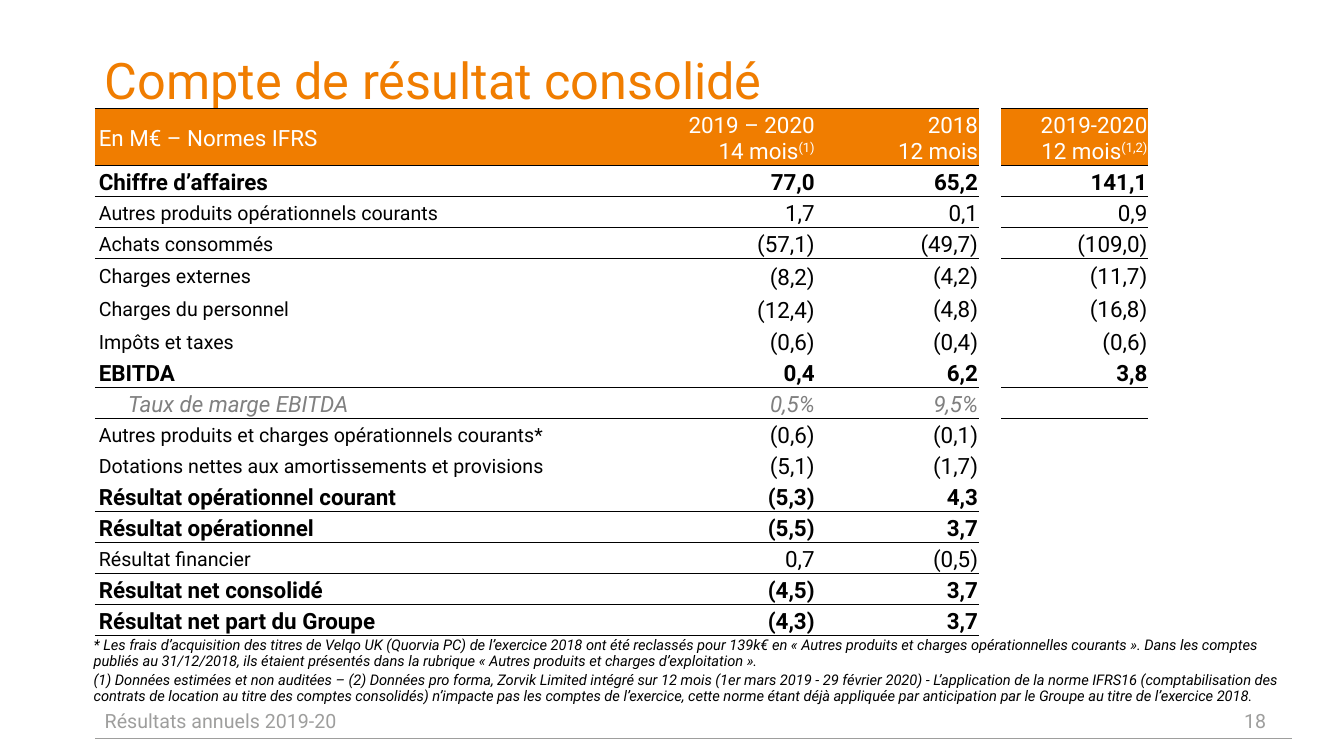
from lxml.etree import SubElement
from pptx import Presentation
from pptx.dml.color import RGBColor
from pptx.enum.shapes import MSO_CONNECTOR
from pptx.enum.text import MSO_ANCHOR, MSO_AUTO_SIZE, PP_ALIGN
from pptx.oxml.ns import qn
from pptx.util import Inches, Pt

COLORS = {"orange": "F07D00", "white": "FFFFFF", "black": "000000",
          "rate": "808080", "footer": "9E9E9D"}
FONT = "Roboto"
NO_STYLE = "{2D5ABB26-0587-4C30-8999-92F81FD0307C}"
COLUMN_WIDTHS = [5.55, 1.6, 1.62, 0.22, 1.46]
HEADER_HEIGHT, ROW_HEIGHT = 0.56, 0.3
SPACER = 3

HEADER = [("En M€ – Normes IFRS", ""), ("2019 – 2020\n14 mois", "(1)"),
          ("2018\n12 mois", ""), ("", ""), ("2019-2020\n12 mois", "(1,2)")]

STYLES = {
    "total": {"label_size": 16, "color": "black", "bold": True, "italic": False},
    "item": {"label_size": 14, "color": "black", "bold": False, "italic": False},
    "rate": {"label_size": 16, "color": "rate", "bold": False, "italic": True},
}

INCOME_ROWS = [
    ("Chiffre d’affaires", "77,0", "65,2", "141,1", "total", True),
    ("Autres produits opérationnels courants", "1,7", "0,1", "0,9", "item", True),
    ("Achats consommés", "(57,1)", "(49,7)", "(109,0)", "item", False),
    ("Charges externes", "(8,2)", "(4,2)", "(11,7)", "item", False),
    ("Charges du personnel", "(12,4)", "(4,8)", "(16,8)", "item", False),
    ("Impôts et taxes", "(0,6)", "(0,4)", "(0,6)", "item", False),
    ("EBITDA", "0,4", "6,2", "3,8", "total", True),
    ("Taux de marge EBITDA", "0,5%", "9,5%", "", "rate", False),
    ("Autres produits et charges opérationnels courants*", "(0,6)", "(0,1)", "", "item", False),
    ("Dotations nettes aux amortissements et provisions", "(5,1)", "(1,7)", "", "item", False),
    ("Résultat opérationnel courant", "(5,3)", "4,3", "", "total", True),
    ("Résultat opérationnel", "(5,5)", "3,7", "", "total", True),
    ("Résultat financier", "0,7", "(0,5)", "", "item", True),
    ("Résultat net consolidé", "(4,5)", "3,7", "", "total", True),
    ("Résultat net part du Groupe", "(4,3)", "3,7", "", "total", True),
]
LOOSE_ROWS = {"Charges externes", "Charges du personnel", "Impôts et taxes"}

ACQUISITION_NOTE = (
    "* Les frais d’acquisition des titres de Velqo UK (Quorvia PC) de l’exercice 2018 ont été "
    "reclassés pour 139k€ en «\u00a0Autres produits et charges opérationnelles courants\u00a0». "
    "Dans les comptes publiés au 31/12/2018, ils étaient présentés dans la rubrique "
    "«\u00a0Autres produits et charges d’exploitation\u00a0».")
BASIS_NOTE = (
    "(1) Données estimées et non auditées – (2) Données pro forma, Zorvik Limited intégré sur "
    "12 mois (1er mars 2019 - 29 février 2020) - L’application de la norme IFRS16 "
    "(comptabilisation des contrats de location au titre des comptes consolidés) n’impacte pas "
    "les comptes de l’exercice, cette norme étant déjà appliquée par anticipation par le Groupe "
    "au titre de l’exercice 2018.")


def rgb(color):
    return RGBColor.from_string(COLORS[color])


def format_text(frame, size, color, bold=False, italic=False):
    for paragraph in frame.paragraphs:
        for run in paragraph.runs:
            run.font.name = FONT
            run.font.size = Pt(size)
            run.font.bold = bold
            run.font.italic = italic
            run.font.color.rgb = rgb(color)


def add_title(slide, left, top, width, height):
    title = slide.shapes.title
    title.left, title.top = Inches(left), Inches(top)
    title.width, title.height = Inches(width), Inches(height)
    frame = title.text_frame
    frame.text = "Compte de résultat consolidé"
    frame.auto_size = MSO_AUTO_SIZE.NONE
    frame.word_wrap = True
    frame.vertical_anchor = MSO_ANCHOR.TOP
    frame.paragraphs[0].alignment = PP_ALIGN.LEFT
    frame.paragraphs[0].line_spacing = 0.9
    format_text(frame, 36, "orange")


def add_text(slide, left, top, width, height, text, size, color, italic=False):
    box = slide.shapes.add_textbox(Inches(left), Inches(top), Inches(width), Inches(height))
    frame = box.text_frame
    frame.word_wrap = True
    frame.text = text
    format_text(frame, size, color, italic=italic)
    return frame


def add_note(slide, left, top, width, height, text):
    frame = add_text(slide, left, top, width, height, text, 10.5, "black", italic=True)
    frame.paragraphs[0].line_spacing = 0.9


def add_footer(slide, left, top, width, height):
    number_width = 0.57
    texts = [(left, 8.37, "Résultats annuels 2019-20"),
             (left + width - number_width, number_width, "18")]
    for text_left, text_width, text in texts:
        frame = add_text(slide, text_left, top, text_width, height, text, 14, "footer")
        frame.vertical_anchor = MSO_ANCHOR.MIDDLE
    rule_top = Inches(top + 0.37)
    rule = slide.shapes.add_connector(MSO_CONNECTOR.STRAIGHT, Inches(left + width), rule_top,
                                      Inches(left), rule_top)
    rule.line.color.rgb = rgb("footer")
    rule.line.width = Pt(0.25)
    SubElement(rule._element.spPr, qn("a:effectLst"))


def add_border(cell, side):
    border = SubElement(cell._tc.get_or_add_tcPr(), qn(f"a:{side}"), w=str(Pt(0.5)))
    fill = SubElement(border, qn("a:solidFill"))
    SubElement(fill, qn("a:srgbClr"), val=COLORS["black"])


def fill_cell(cell, column, text, fill=None, borders=()):
    cell.margin_left, cell.margin_top = Inches(0.04), Inches(0.04)
    cell.margin_right, cell.margin_bottom = Inches(0.01), 0
    cell.vertical_anchor = MSO_ANCHOR.MIDDLE
    for side in borders:
        add_border(cell, side)
    if fill:
        cell.fill.solid()
        cell.fill.fore_color.rgb = rgb(fill)
    else:
        cell.fill.background()
    cell.text_frame.text = text
    for paragraph in cell.text_frame.paragraphs:
        paragraph.alignment = PP_ALIGN.RIGHT if column else PP_ALIGN.LEFT
        if not text:
            SubElement(paragraph._p, qn("a:endParaRPr"), sz="1400")


def fill_header(table):
    for column, (text, mark) in enumerate(HEADER):
        cell = table.cell(0, column)
        if column == SPACER:
            fill_cell(cell, column, text, "white")
            continue
        fill_cell(cell, column, text, "orange", ("lnT", "lnB"))
        if mark:
            note_mark = cell.text_frame.paragraphs[-1].add_run()
            note_mark.text = mark
            note_mark._r.get_or_add_rPr().set("baseline", "30000")
        format_text(cell.text_frame, 16, "white")


def fill_income_row(table, row, income_row, ruled_above):
    label, current, previous, pro_forma, kind, ruled = income_row
    style = STYLES[kind]
    for column, text in enumerate([label, current, previous, "", pro_forma]):
        cell = table.cell(row, column)
        borders = []
        if column != SPACER:
            if ruled_above and (column < SPACER or text or kind == "rate"):
                borders.append("lnT")
            if ruled and (column < SPACER or text):
                borders.append("lnB")
        fill_cell(cell, column, text, "white" if column == SPACER else None, borders)
        format_text(cell.text_frame, 16 if column else style["label_size"],
                    style["color"], style["bold"], style["italic"])
    if label in LOOSE_ROWS:
        table.cell(row, 1).text_frame.paragraphs[0].line_spacing = 1.07
    if kind == "rate":
        properties = table.cell(row, 0).text_frame.paragraphs[0]._p.get_or_add_pPr()
        properties.set("marL", str(Inches(0.29)))


def add_income_table(slide, left, top, width, height):
    table = slide.shapes.add_table(len(INCOME_ROWS) + 1, len(COLUMN_WIDTHS), Inches(left),
                                   Inches(top), Inches(width), Inches(height)).table
    table.first_row = table.horz_banding = False
    table._tbl.tblPr.find(qn("a:tableStyleId")).text = NO_STYLE
    for column, column_width in zip(table.columns, COLUMN_WIDTHS):
        column.width = Inches(column_width)
    for index, row in enumerate(table.rows):
        row.height = Inches(ROW_HEIGHT if index else HEADER_HEIGHT)
    fill_header(table)
    ruled_above = True
    for row, income_row in enumerate(INCOME_ROWS, 1):
        fill_income_row(table, row, income_row, ruled_above)
        ruled_above = income_row[-1]


def main():
    deck = Presentation()
    deck.slide_width, deck.slide_height = Inches(13.33), Inches(7.5)
    slide = deck.slides.add_slide(deck.slide_layouts[5])
    add_title(slide, 0.94, 0.51, 11.87, 0.72)
    add_footer(slide, 0.94, 6.95, 11.87, 0.4)
    add_note(slide, 0.83, 6.63, 12.09, 0.4, BASIS_NOTE)
    add_income_table(slide, 0.94, 1.07, sum(COLUMN_WIDTHS),
                     HEADER_HEIGHT + ROW_HEIGHT * len(INCOME_ROWS))
    add_note(slide, 0.83, 6.28, 12.09, 0.4, ACQUISITION_NOTE)
    deck.save("out.pptx")


if __name__ == "__main__":
    main()
